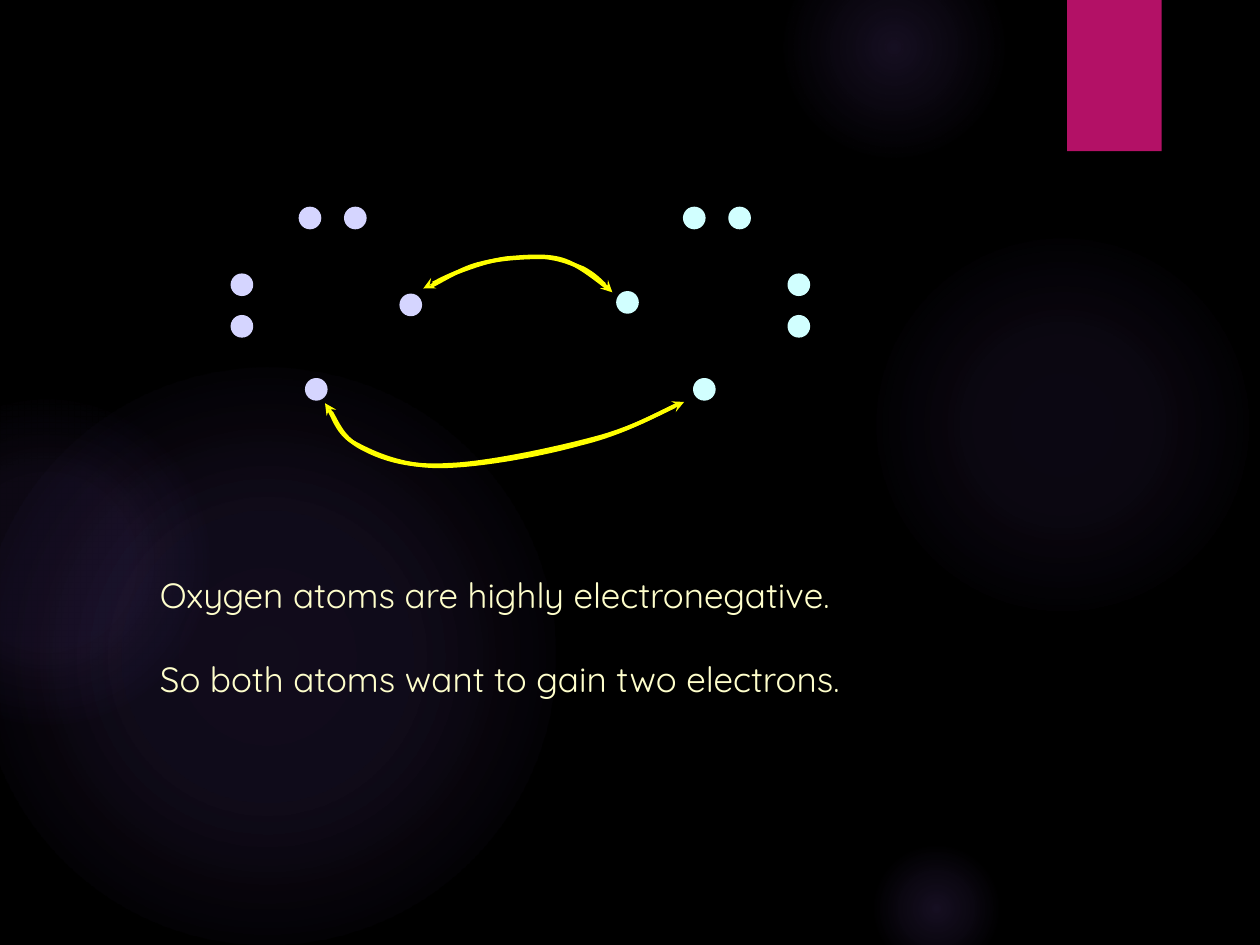
from lxml import etree
from pptx import Presentation
from pptx.dml.color import RGBColor
from pptx.enum.shapes import MSO_SHAPE
from pptx.oxml import parse_xml
from pptx.oxml.ns import nsdecls, qn
from pptx.util import Inches, Pt

FONT = "Quicksand"
BACKGROUND = "000000"
BANNER = "B31166"
GLOW = "9B6BF2"
CAPTION = "FFFFCC"
ARROW = "FFFF00"
LEFT_ELECTRON = "D5D5FF"
RIGHT_ELECTRON = "D1FFFF"
ELECTRON_SIZE = 0.18

# left, top, diameter, then (position %, opacity %) of each gradient stop
GLOWS = [
    (6.89, 1.83, 3.08, [(0, 7), (36, 6), (69, 0)]),
    (6.22, -0.5, 1.75, [(0, 14), (36, 7), (73, 0)]),
    (6.89, 6.67, 1.08, [(0, 14), (36, 7), (66, 0)]),
    (-0.17, 2.92, 4.58, [(0, 11), (36, 10), (75, 0)]),
    (-0.92, 3.17, 2.58, [(0, 8), (36, 8), (72, 0)]),
]

# Electron offsets from the top left corner of each atom
LEFT_ATOM = [(0, 0.53), (0, 0.86), (0.54, 0), (0.9, 0), (1.34, 0.69), (0.59, 1.36)]
RIGHT_ATOM = [(1.36, 0.53), (1.36, 0.86), (0.53, 0), (0.89, 0), (0, 0.67), (0.61, 1.36)]

# Start point, then two control points and an end point for each segment
UPPER_TO_RIGHT = [
    (3.42, 2.27),
    (3.49, 2.24), (3.67, 2.12), (3.82, 2.09),
    (3.97, 2.05), (4.17, 2.04), (4.31, 2.04),
    (4.44, 2.05), (4.53, 2.09), (4.63, 2.13),
    (4.72, 2.18), (4.82, 2.28), (4.86, 2.32),
]
LOWER_TO_RIGHT = [
    (2.61, 3.25),
    (2.64, 3.29), (2.68, 3.45), (2.82, 3.52),
    (2.97, 3.6), (3.19, 3.7), (3.49, 3.7),
    (3.79, 3.7), (4.29, 3.61), (4.61, 3.52),
    (4.94, 3.44), (5.26, 3.26), (5.43, 3.19),
]
UPPER_TO_LEFT = [
    (4.83, 2.29),
    (4.77, 2.25), (4.6, 2.1), (4.46, 2.06),
    (4.33, 2.02), (4.15, 2.04), (4.02, 2.05),
    (3.88, 2.07), (3.77, 2.11), (3.66, 2.15),
    (3.55, 2.19), (3.42, 2.26), (3.36, 2.29),
]
LOWER_TO_LEFT = [
    (5.38, 3.21),
    (5.27, 3.26), (5.03, 3.4), (4.72, 3.48),
    (4.42, 3.56), (3.87, 3.68), (3.56, 3.69),
    (3.26, 3.71), (3.05, 3.65), (2.88, 3.56),
    (2.72, 3.48), (2.64, 3.27), (2.58, 3.2),
]


def paint(fill, color):
    fill.solid()
    fill.fore_color.rgb = RGBColor.from_string(color)


def add_shape(shapes, kind, box, color):
    shape = shapes.add_shape(kind, *map(Inches, box))
    shape.shadow.inherit = False
    shape.line.fill.background()
    paint(shape.fill, color)
    return shape


def add_text(shapes, box, runs, color, font=FONT):
    """Add one unwrapped line made of (text, size) runs."""
    text_box = shapes.add_textbox(*map(Inches, box))
    text_box.text_frame.word_wrap = False
    paragraph = text_box.text_frame.paragraphs[0]
    for text, size in runs:
        run = paragraph.add_run()
        run.text = text
        run.font.name = font
        run.font.size = Pt(size)
        run.font.color.rgb = RGBColor.from_string(color)


def add_glow(shapes, left, top, diameter, stops):
    """Add a circle that fades out from its centre."""
    box = (left, top, diameter, diameter)
    shape = add_shape(shapes, MSO_SHAPE.OVAL, box, GLOW)
    stop_xml = "".join(
        f'<a:gs pos="{position * 1000}"><a:srgbClr val="{GLOW}">'
        f'<a:alpha val="{opacity * 1000}"/></a:srgbClr></a:gs>'
        for position, opacity in stops
    )
    gradient = parse_xml(
        f'<a:gradFill {nsdecls("a")} rotWithShape="1"><a:gsLst>{stop_xml}</a:gsLst>'
        '<a:path path="circle"><a:fillToRect l="50000" t="50000" r="50000" b="50000"/>'
        "</a:path></a:gradFill>"
    )
    properties = shape._element.spPr
    properties.replace(properties.find(qn("a:solidFill")), gradient)


def add_backdrop(slide):
    paint(slide.background.fill, BACKGROUND)
    for glow in GLOWS:
        add_glow(slide.shapes, *glow)
    add_shape(slide.shapes, MSO_SHAPE.RECTANGLE, (8.47, 0, 0.75, 1.2), BANNER)


def add_atom(slide, left, top, electrons, color):
    """Group the outer electrons of one atom."""
    group = slide.shapes.add_group_shape()
    for x, y in electrons:
        box = (left + x, top + y, ELECTRON_SIZE, ELECTRON_SIZE)
        add_shape(group.shapes, MSO_SHAPE.OVAL, box, color)


def add_curved_arrow(slide, points):
    """Draw a Bezier curve with an arrowhead at its end."""
    start, *others = [(Inches(x), Inches(y)) for x, y in points]
    builder = slide.shapes.build_freeform(*start)
    builder.add_line_segments(others, close=False)
    shape = builder.convert_to_shape()
    shape.shadow.inherit = False
    shape.fill.background()
    paint(shape.line.fill, ARROW)
    shape.line.width = Pt(2.25)

    # Every three straight segments become one cubic segment
    segments = list(shape._element.iter(qn("a:lnTo")))
    outline = segments[0].getparent()
    for index in range(0, len(segments), 3):
        curve = etree.SubElement(outline, qn("a:cubicBezTo"))
        for segment in segments[index:index + 3]:
            curve.append(segment[0])
            outline.remove(segment)
    line = shape.line._get_or_add_ln()
    etree.SubElement(line, qn("a:tailEnd"), type="stealth")


def add_captions(slide, left, top):
    sentences = [
        "Oxygen atoms are highly electronegative",
        "So both atoms want to gain two electrons",
    ]
    for row, sentence in enumerate(sentences):
        box = (left, top + row * 0.67, 5.95, 0.44)
        add_text(slide.shapes, box, [(sentence, 20), (".", 18)], CAPTION)


def main():
    presentation = Presentation()
    presentation.slide_width = Inches(10)
    presentation.slide_height = Inches(7.5)
    slide = presentation.slides.add_slide(presentation.slide_layouts[6])

    add_backdrop(slide)
    add_captions(slide, 1.17, 4.5)
    for points in (UPPER_TO_RIGHT, LOWER_TO_RIGHT):
        add_curved_arrow(slide, points)
    add_atom(slide, 4.89, 1.64, RIGHT_ATOM, RIGHT_ELECTRON)
    add_atom(slide, 1.83, 1.64, LEFT_ATOM, LEFT_ELECTRON)
    for points in (UPPER_TO_LEFT, LOWER_TO_LEFT):
        add_curved_arrow(slide, points)
    presentation.save("out.pptx")


if __name__ == "__main__":
    main()
